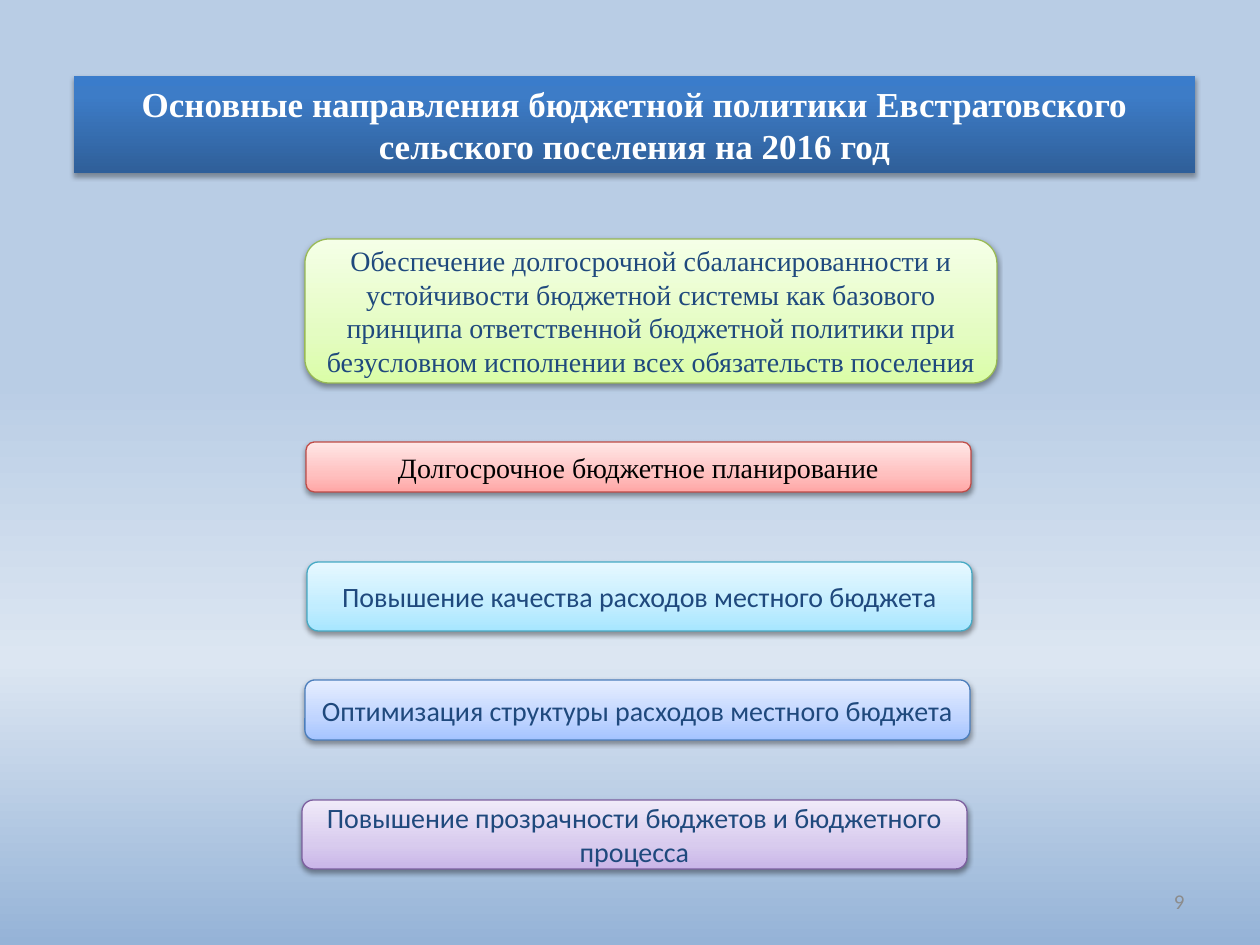
from dataclasses import dataclass

from lxml import etree
from pptx import Presentation
from pptx.dml.color import RGBColor
from pptx.enum.shapes import MSO_SHAPE
from pptx.enum.text import MSO_ANCHOR, MSO_AUTO_SIZE, PP_ALIGN
from pptx.oxml.ns import qn
from pptx.util import Pt

RECT, ROUND = MSO_SHAPE.RECTANGLE, MSO_SHAPE.ROUNDED_RECTANGLE
TOP, MIDDLE = MSO_ANCHOR.TOP, MSO_ANCHOR.MIDDLE
CENTER, RIGHT = PP_ALIGN.CENTER, PP_ALIGN.RIGHT
NO_FIT, GROW = MSO_AUTO_SIZE.NONE, MSO_AUTO_SIZE.SHAPE_TO_FIT_TEXT
SCALE = 914400 / 126  # EMU in one px
UP, DOWN = 90, 270
SERIF, SANS = "Times New Roman", "Calibri"


@dataclass(frozen=True)
class Theme:
    back: tuple = ((0, "B9CDE5"), (40, "B9CDE5"), (70, "DCE6F2"), (100, "95B3D7"))
    title: tuple = ((0, "2F5F99"), (80, "3D7CC7"), (100, "3A7CCB"))
    white: str = "FFFFFF"
    black: str = "000000"
    navy: str = "1F497D"
    gray: str = "8C8C8C"
    head: int = 20
    body: int = 16
    foot: int = 12
    edge: float = 0.75


THEME = Theme()


@dataclass(frozen=True)
class Goal:
    """A rounded box; tints run from its bottom to its top."""
    text: str
    left: int
    top: int
    height: int
    tints: tuple
    line: str
    width: int = 665
    font: str = SANS
    color: str = THEME.navy


GOALS = (
    Goal("Обеспечение долгосрочной сбалансированности и устойчивости бюджетной "
         "системы как базового принципа ответственной бюджетной политики при "
         "безусловном исполнении всех обязательств поселения",
         305, 239, 144, ("DAFDA7", "E4FCC2", "F5FFE7"), "98B955", 692, SERIF),
    Goal("Долгосрочное бюджетное планирование",
         306, 442, 50, ("FFA6A5", "FFC0BF", "FFE7E7"), "BF4C48",
         font=SERIF, color=THEME.black),
    Goal("Повышение качества расходов местного бюджета",
         307, 562, 69, ("A7E6FF", "C1EDFF", "E7F8FF"), "46AAC5"),
    Goal("Оптимизация структуры расходов местного бюджета",
         305, 680, 60, ("A4C4FF", "BFD4FF", "E6EEFF"), "4B7EBC"),
    Goal("Повышение прозрачности бюджетов и бюджетного процесса",
         302, 800, 69, ("C9B5E8", "D8CBEE", "F0EAF9"), "7D60A0"),
)


def px(*sizes: int) -> list[int]:
    return [round(size * SCALE) for size in sizes]


def blend(fill, root, stops: tuple, angle: int) -> None:
    """Give fill, which lies inside root, a linear gradient."""
    fill.gradient()
    fill.gradient_angle = angle
    group = next(root.iter(qn("a:gsLst")))
    for stop in list(group):
        group.remove(stop)
    for place, color in stops:
        stop = etree.SubElement(group, qn("a:gs"), pos=str(place * 1000))
        etree.SubElement(stop, qn("a:srgbClr"), val=color)


def shade(shape, alpha: int, drop: float) -> None:
    """Cast a soft shadow straight down."""
    shape.shadow.inherit = False
    group = shape._element.spPr.find(qn("a:effectLst"))
    outer = etree.SubElement(
        group, qn("a:outerShdw"), blurRad=str(Pt(3.1)), dist=str(Pt(drop)),
        dir="5400000", rotWithShape="0")
    color = etree.SubElement(outer, qn("a:srgbClr"), val=THEME.black)
    etree.SubElement(color, qn("a:alpha"), val=str(alpha * 1000))


def write(shape, text: str, size: int, font: str, color: str, bold: bool = False,
          align=CENTER, anchor=MIDDLE, fit=NO_FIT) -> None:
    frame = shape.text_frame
    para = frame.paragraphs[0]
    run = para.add_run()
    run.text = text
    formats = (
        (frame, {"word_wrap": True, "auto_size": fit, "vertical_anchor": anchor}),
        (para, {"alignment": align}),
        (run.font, {"size": Pt(size), "name": font, "bold": bold}),
    )
    for target, values in formats:
        for name, value in values.items():
            setattr(target, name, value)
    run.font.color.rgb = RGBColor.from_string(color)


def draw_title(slide) -> None:
    shape = slide.shapes.add_shape(RECT, *px(74, 76, 1121, 97))
    blend(shape.fill, shape._element, THEME.title, UP)
    shape.line.fill.background()
    shade(shape, 35, 1.8)
    write(shape, "Основные направления бюджетной политики Евстратовского "
          "сельского поселения на 2016 год", THEME.head, SERIF, THEME.white,
          bold=True, anchor=TOP, fit=GROW)


def draw_goal(slide, goal: Goal) -> None:
    shape = slide.shapes.add_shape(
        ROUND, *px(goal.left, goal.top, goal.width, goal.height))
    blend(shape.fill, shape._element, tuple(zip((0, 35, 100), goal.tints)), UP)
    shape.line.color.rgb = RGBColor.from_string(goal.line)
    shape.line.width = Pt(THEME.edge)
    shade(shape, 38, 1.6)
    write(shape, goal.text, THEME.body, goal.font, goal.color)


def main() -> None:
    deck = Presentation()
    deck.slide_width, deck.slide_height = px(1260, 945)
    slide = deck.slides.add_slide(deck.slide_layouts[6])
    blend(slide.background.fill, slide._element, THEME.back, DOWN)
    draw_title(slide)
    for goal in GOALS:
        draw_goal(slide, goal)
    number = slide.shapes.add_textbox(*px(903, 876, 294, 50))
    write(number, "9", THEME.foot, SANS, THEME.gray, align=RIGHT)
    deck.save("out.pptx")


if __name__ == "__main__":
    main()
